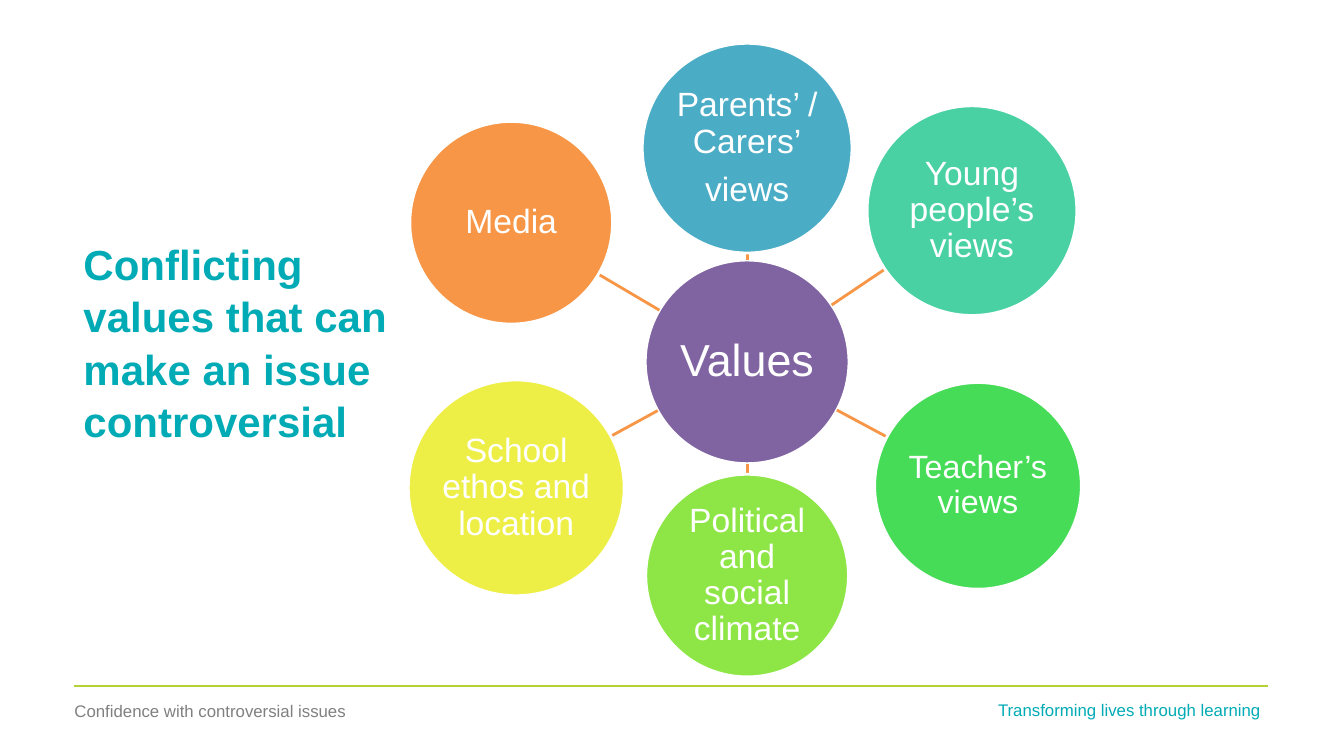
import math

from lxml import etree
from pptx import Presentation
from pptx.dml.color import RGBColor
from pptx.enum import shapes, text
from pptx.oxml import ns
from pptx.util import Inches, Pt

WHITE = RGBColor(0xFF, 0xFF, 0xFF)
TEAL = RGBColor(0x00, 0xAB, 0xB5)
GREY = RGBColor(0x80, 0x80, 0x80)
LIME = RGBColor(0xB3, 0xD2, 0x36)
PURPLE = RGBColor(0x80, 0x64, 0xA2)
BLUE = RGBColor(0x4B, 0xAC, 0xC6)
MINT = RGBColor(0x49, 0xD1, 0xA3)
GREEN = RGBColor(0x47, 0xDC, 0x57)
LEAF = RGBColor(0x8D, 0xE6, 0x46)
YELLOW = RGBColor(0xEE, 0xEF, 0x46)
ORANGE = RGBColor(0xF7, 0x96, 0x46)
FONT = "Arial"

# Content: text, centre x, centre y, diameter, fill, font size
TITLE = "Conflicting values that can make an issue \vcontroversial"
HUB = ("Values", 7.41, 3.59, 2.02, PURPLE, 32)
INFLUENCES = [
    ("Parents’ /Carers’\nviews", 7.41, 1.47, 2.08, BLUE, 24),
    ("Young people’s views", 9.64, 2.09, 2.08, MINT, 24),
    ("Teacher’s views", 9.7, 4.82, 2.05, GREEN, 23),
    ("Political and social climate", 7.41, 5.71, 2.01, LEAF, 24),
    ("School ethos and location", 5.12, 4.84, 2.14, YELLOW, 24),
    ("Media", 5.07, 2.21, 2.01, ORANGE, 24),
]
# Footer: text, left, top, colour
FOOTERS = [
    ("Confidence with controversial issues", 0.64, 6.9, GREY),
    ("Transforming lives through learning", 9.8, 6.89, TEAL),
]


def style_font(paragraph, size, color, bold=False):
    for run in paragraph.runs:
        run.font.name = FONT
        run.font.size = Pt(size)
        run.font.bold = bold
        run.font.color.rgb = color


def add_text(slide, content, left, top, width, height, size, color, bold=False):
    box = slide.shapes.add_textbox(Inches(left), Inches(top), Inches(width), Inches(height))
    frame = box.text_frame
    frame.word_wrap = True
    frame.vertical_anchor = text.MSO_ANCHOR.MIDDLE
    frame.text = content
    style_font(frame.paragraphs[0], size, color, bold)
    return frame


def add_line(slide, start, end, color, width):
    line = slide.shapes.add_connector(
        shapes.MSO_CONNECTOR.STRAIGHT, *(Inches(value) for value in (*start, *end)))
    line.line.color.rgb = color
    line.line.width = Pt(width)
    etree.SubElement(line._element.spPr, ns.qn("a:effectLst"))


def add_circle(slide, label, x, y, diameter, fill, size):
    circle = slide.shapes.add_shape(
        shapes.MSO_SHAPE.OVAL, Inches(x - diameter / 2), Inches(y - diameter / 2),
        Inches(diameter), Inches(diameter))
    circle.shadow.inherit = False
    circle.fill.solid()
    circle.fill.fore_color.rgb = fill
    circle.line.color.rgb = WHITE
    circle.line.width = Pt(2)
    frame = circle.text_frame
    frame.word_wrap = True
    frame.vertical_anchor = text.MSO_ANCHOR.MIDDLE
    frame.margin_left = frame.margin_right = Inches(0.02)
    frame.margin_top = frame.margin_bottom = Inches(0.02)
    frame.text = label
    for paragraph in frame.paragraphs:
        paragraph.alignment = text.PP_ALIGN.CENTER
        paragraph.line_spacing = 0.9
        paragraph.space_after = Pt(size * 0.35)
        style_font(paragraph, size, WHITE)


def add_spoke(slide, hub, influence):
    """Line from the hub's rim to the rim of an outer circle."""
    (_, x1, y1, d1, *_), (_, x2, y2, d2, *_) = hub, influence
    length = math.hypot(x2 - x1, y2 - y1)
    dx, dy = (x2 - x1) / length, (y2 - y1) / length
    add_line(slide, (x1 + dx * d1 / 2, y1 + dy * d1 / 2),
             (x2 - dx * d2 / 2, y2 - dy * d2 / 2), ORANGE, 2)


def main():
    presentation = Presentation()
    presentation.slide_width = Inches(13.33)
    presentation.slide_height = Inches(7.5)
    slide = presentation.slides.add_slide(presentation.slide_layouts[6])

    # Footer
    add_line(slide, (0.73, 6.81), (12.58, 6.81), LIME, 1.5)
    for content, left, top, color in FOOTERS:
        add_text(slide, content, left, top, 3.01, 0.3, 12, color)

    # Title
    title = add_text(slide, TITLE, 0.73, 0.91, 3.24, 4.95, 30, TEAL, bold=True)
    title.paragraphs[0].line_spacing = 1.04

    # Hub with its circle of influences
    add_circle(slide, *HUB)
    for influence in INFLUENCES:
        add_spoke(slide, HUB, influence)
        add_circle(slide, *influence)

    presentation.save("out.pptx")


if __name__ == "__main__":
    main()
